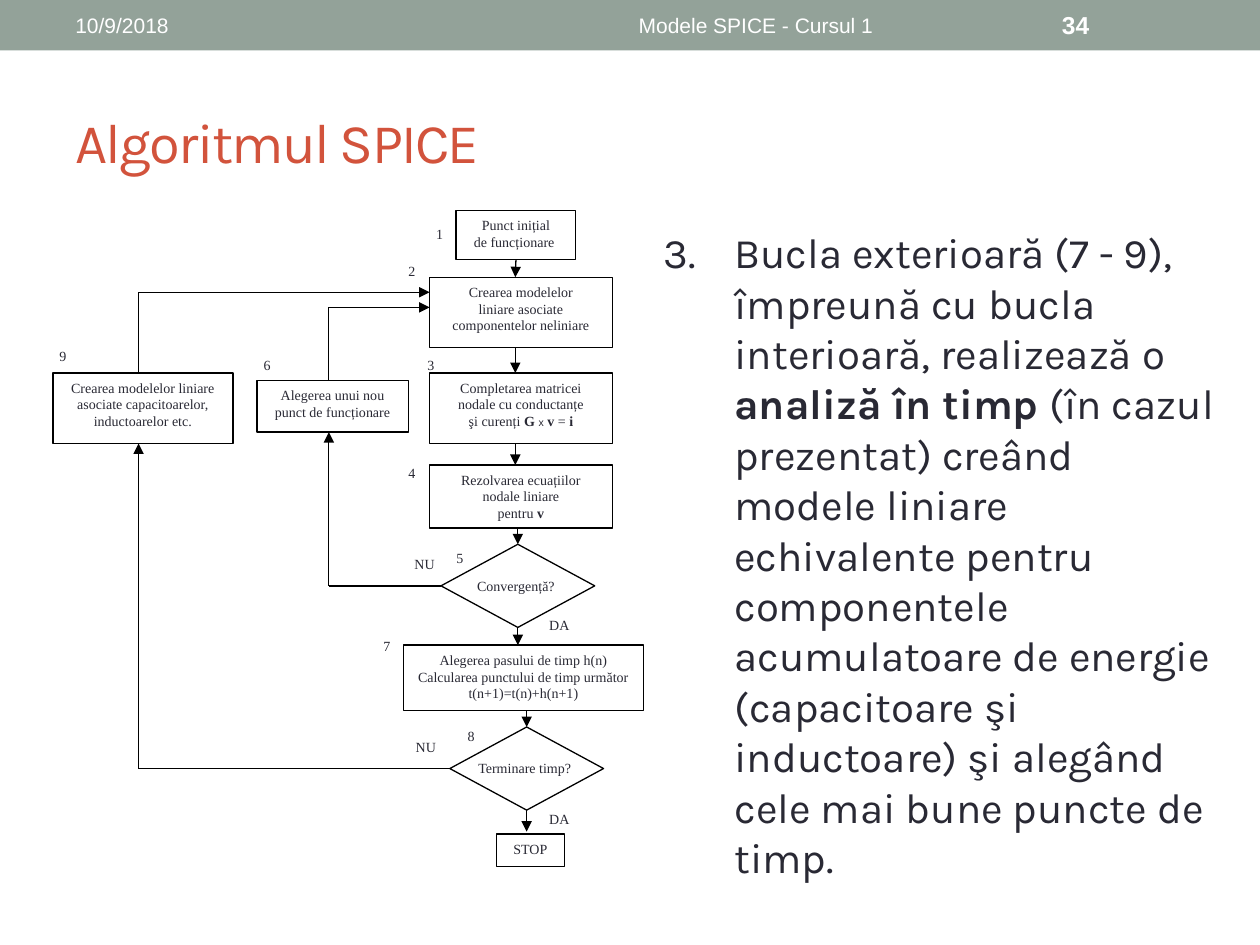
from pptx import Presentation
from pptx.dml.color import RGBColor
from pptx.enum.shapes import MSO_CONNECTOR, MSO_SHAPE
from pptx.enum.text import MSO_ANCHOR, PP_ALIGN
from pptx.oxml.ns import qn
from pptx.util import Inches, Pt
from lxml import etree

RECT, DIAMOND = MSO_SHAPE.RECTANGLE, MSO_SHAPE.DIAMOND
STRAIGHT = MSO_CONNECTOR.STRAIGHT
LEFT, CENTER = PP_ALIGN.LEFT, PP_ALIGN.CENTER
TOP, MIDDLE = MSO_ANCHOR.TOP, MSO_ANCHOR.MIDDLE
TOP_SIDE, LEFT_SIDE, BOTTOM_SIDE = 0, 1, 2

WHITE = RGBColor(0xFF, 0xFF, 0xFF)
BLACK = RGBColor(0, 0, 0)
SAGE = RGBColor(0x93, 0xA2, 0x99)
RED = RGBColor(0xD2, 0x53, 0x3C)
INK = RGBColor(0x29, 0x29, 0x34)

HEADER = dict(name="Arial", size=Pt(12), color=WHITE)
PAGE = dict(name="Arial", size=Pt(14), color=WHITE, bold=True)
TITLE = dict(name="Karla", size=Pt(32), color=RED)
BODY = dict(name="Karla", size=Pt(24), color=INK)
SMALL = dict(name="Times New Roman", size=Pt(8), color=INK)
BOLD = dict(bold=True)
TIMES = dict(name="Arial", size=Pt(6))

# Text: a list of paragraphs; each is a string or a list of (text, format) runs.
HEADERS = [
    ("10/9/2018", (0.5, 0.02, 3.17, 0.36), LEFT, HEADER),
    ("Modele SPICE - Cursul 1", (3.75, 0.02, 4.5, 0.36), CENTER, HEADER),
    ("34", (8.33, 0.02, 1.17, 0.36), LEFT, PAGE),
]
EXPLANATION = [
    ("Bucla exterioară (7 - 9), împreună cu bucla interioară, realizează o ", {}),
    ("analiză în timp ", BOLD),
    ("(în cazul prezentat) creând modele liniare echivalente pentru componentele "
     "acumulatoare de energie (capacitoare şi inductoare) şi alegând cele mai bune "
     "puncte de timp.", {}),
]
STEP_NUMBERS = {
    "1": (3.41, 1.79), "2": (3.19, 2.08), "3": (3.34, 2.83),
    "4": (3.19, 3.69), "5": (3.57, 4.36), "6": (2.04, 2.83),
    "7": (2.99, 5.06), "8": (3.66, 5.77), "9": (0.42, 2.76),
}
STEPS = {
    "initial": (RECT, (3.62, 1.67, 0.95, 0.39),
                ["Punct inițial", "de funcționare "]),
    "models": (RECT, (3.41, 2.2, 1.45, 0.56),
               ["Crearea modelelor", "liniare asociate", "componentelor neliniare"]),
    "matrix": (RECT, (3.41, 2.96, 1.45, 0.56),
               ["Completarea matricei", "nodale cu conductanțe",
                [("şi curenți ", {}), ("G ", BOLD), ("x", TIMES), (" ", {}),
                 ("v", BOLD), (" = ", {}), ("i", BOLD)]]),
    "solve": (RECT, (3.41, 3.69, 1.45, 0.5),
              ["Rezolvarea ecuațiilor", "nodale liniare",
               [("pentru ", {}), ("v", BOLD)]]),
    "convergence": (DIAMOND, (3.5, 4.32, 1.22, 0.66), []),
    "new point": (RECT, (2.04, 3.02, 1.2, 0.41),
                  ["Alegerea unui nou", "punct de funcționare"]),
    "time step": (RECT, (3.2, 5.12, 1.91, 0.52),
                  ["Alegerea pasului de timp h(n)",
                   "Calcularea punctului de timp următor", "t(n+1)=t(n)+h(n+1)"]),
    "end of time": (DIAMOND, (3.57, 5.77, 1.22, 0.66), []),
    "stop": (RECT, (3.94, 6.62, 0.54, 0.26), ["STOP"]),
    "storage": (RECT, (0.42, 2.96, 1.43, 0.56),
                ["Crearea modelelor liniare", "asociate capacitoarelor,",
                 "inductoarelor etc."]),
}
CAPTIONS = [  # text, left, top, width
    ("Convergență?", 3.7, 4.58, 0.79), ("Terminare timp?", 3.77, 6.03, 0.79),
    ("DA", 4.31, 4.89, 0.26), ("DA", 4.31, 6.43, 0.26),
    ("NU", 3.24, 4.41, 0.26), ("NU", 3.25, 5.86, 0.26),
]
# Each route is a chain of points; the last segment carries the arrowhead.
# A point is (x, y), or (step, side) where it meets the middle of a side.
ROUTES = [
    [("initial", BOTTOM_SIDE), (4.09, 2.2)],
    [(4.09, 2.76), (4.09, 2.96)],
    [(4.09, 3.52), (4.09, 3.69)],
    [(4.11, 4.19), ("convergence", TOP_SIDE)],
    [("convergence", BOTTOM_SIDE), (4.11, 5.12)],
    [(4.18, 5.64), ("end of time", TOP_SIDE)],
    [("end of time", BOTTOM_SIDE), (4.18, 6.6)],
    [("convergence", LEFT_SIDE), (2.61, 4.65), (2.61, 3.43)],
    [(2.61, 3.02), (2.61, 2.44), (3.41, 2.44)],
    [("end of time", LEFT_SIDE), (1.1, 6.1), (1.1, 3.52)],
    [(1.1, 2.96), (1.1, 2.32), (3.41, 2.32)],
]


def write(shape, paragraphs, style, align=LEFT, anchor=TOP, inset=None):
    tf = shape.text_frame
    tf.word_wrap = True
    tf.vertical_anchor = anchor
    if inset is not None:
        for side in ("left", "top", "right", "bottom"):
            setattr(tf, f"margin_{side}", Inches(inset))
    for i, runs in enumerate(paragraphs):
        p = tf.add_paragraph() if i else tf.paragraphs[0]
        p.alignment = align
        for text, extra in [(runs, {})] if isinstance(runs, str) else runs:
            r = p.add_run()
            r.text = text
            for key, value in {**style, **extra}.items():
                if key == "color":
                    r.font.color.rgb = value
                else:
                    setattr(r.font, key, value)


def add_text(s, box, paragraphs, style, **layout):
    tb = s.shapes.add_textbox(*map(Inches, box))
    write(tb, paragraphs, style, **layout)
    return tb.text_frame.paragraphs[0]


def add_box(s, kind, box, fill=WHITE, outlined=False):
    sp = s.shapes.add_shape(kind, *map(Inches, box))
    sp.shadow.inherit = False
    sp.fill.solid()
    sp.fill.fore_color.rgb = fill
    if outlined:
        sp.line.color.rgb = BLACK
        sp.line.width = Pt(0.75)
    else:
        sp.line.fill.background()
    return sp


def add_label(s, text, box):
    write(add_box(s, RECT, box), [text], SMALL, align=CENTER, inset=0)


def add_segment(s, start, end, steps, arrow):
    ends = [(0, 0) if isinstance(a, str) else (Inches(a), Inches(b))
            for a, b in (start, end)]
    line = s.shapes.add_connector(STRAIGHT, *ends[0], *ends[1])
    for point, connect in ((start, line.begin_connect), (end, line.end_connect)):
        if isinstance(point[0], str):
            connect(steps[point[0]], point[1])
    line.line.color.rgb = BLACK
    line.line.width = Pt(0.75)
    if arrow:
        etree.SubElement(line.line._get_or_add_ln(), qn("a:tailEnd"), type="triangle")
    etree.SubElement(line._element.spPr, qn("a:effectLst"))


def add_flowchart(s):
    for number, (x, y) in STEP_NUMBERS.items():
        add_label(s, number, (x, y, 0.16, 0.15))
    steps = {}
    for name, (kind, box, lines) in STEPS.items():
        steps[name] = add_box(s, kind, box, outlined=True)
        write(steps[name], lines, SMALL, align=CENTER)
    for text, x, y, width in CAPTIONS:
        add_label(s, text, (x, y, width, 0.17))
    for route in ROUTES:
        for start, end in zip(route, route[1:]):
            add_segment(s, start, end, steps, arrow=end is route[-1])


def main():
    prs = Presentation()
    prs.slide_width, prs.slide_height = Inches(10), Inches(7.5)
    s = prs.slides.add_slide(prs.slide_layouts[6])

    add_box(s, RECT, (0, 0, 10, 0.4), fill=SAGE)
    for text, box, align, style in HEADERS:
        add_text(s, box, [text], style, align=align, anchor=MIDDLE)
    p = add_text(s, (0.5, 0.58, 9, 1.08), ["Algoritmul SPICE"], TITLE, anchor=MIDDLE)
    p.runs[0].font._element.set("spc", "-100")

    p = add_text(s, (5.17, 1.75, 4.58, 4.54), [EXPLANATION], BODY)
    pPr = p._p.get_or_add_pPr()
    pPr.set("marL", str(Inches(0.56)))
    pPr.set("indent", str(-Inches(0.56)))
    etree.SubElement(pPr, qn("a:buAutoNum"), type="arabicPeriod", startAt="3")

    add_flowchart(s)
    prs.save("out.pptx")


if __name__ == "__main__":
    main()
